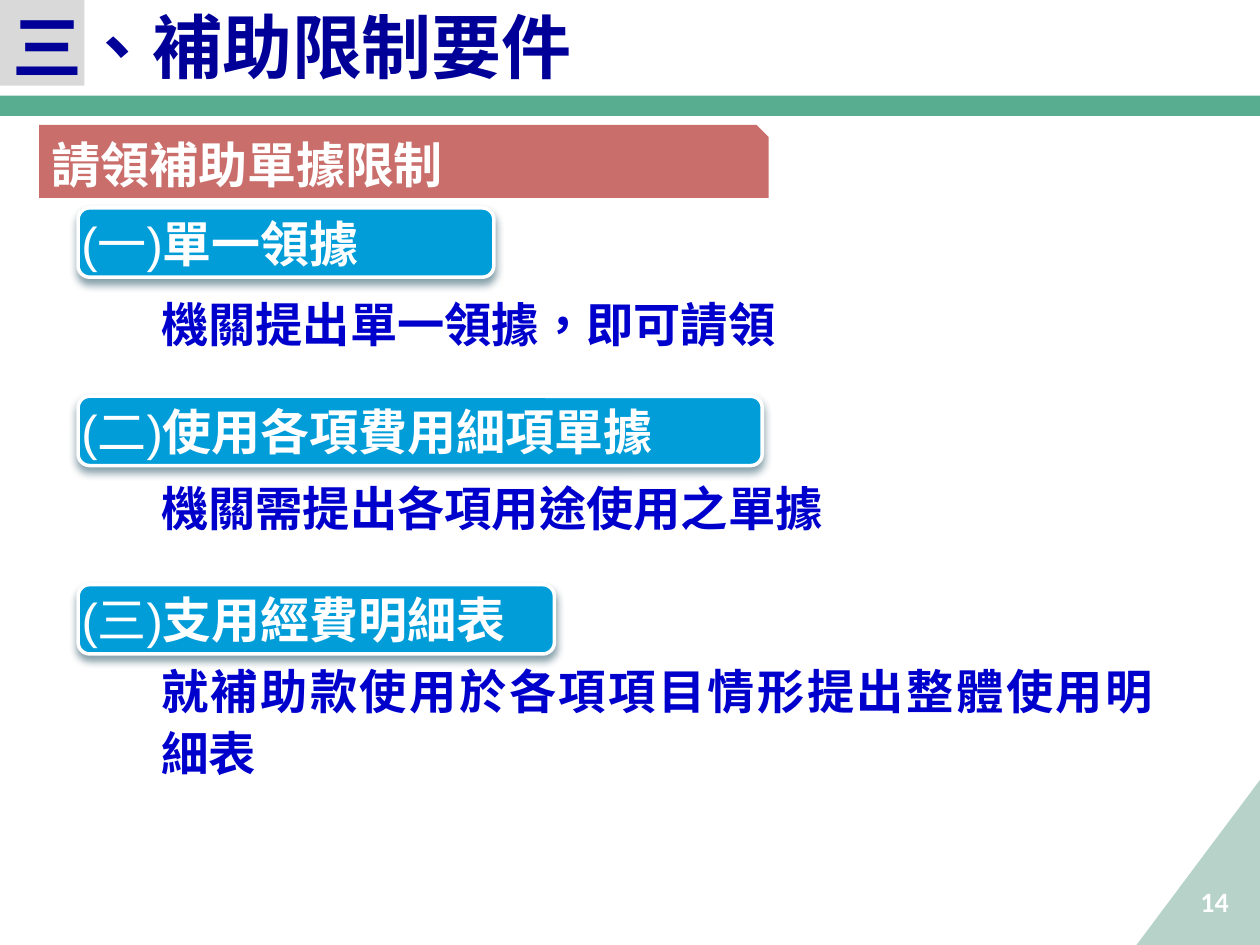
import pptx
import pptx.util
import pptx.dml.color
import pptx.enum.lang
import pptx.enum.shapes
import pptx.enum.text
import pptx.oxml
import pptx.oxml.ns

Inches = pptx.util.Inches
Pt = pptx.util.Pt
Shapes = pptx.enum.shapes.MSO_SHAPE
Align = pptx.enum.text.PP_ALIGN
Anchor = pptx.enum.text.MSO_ANCHOR
CJK = "Noto Sans CJK SC"
NAMESPACE = pptx.oxml.ns.nsdecls("a")

presentation = pptx.Presentation()
presentation.slide_width = Inches(10)
presentation.slide_height = Inches(7.5)
slide = presentation.slides.add_slide(presentation.slide_layouts[6])


def add_box(preset, left, top, width, height, fill=None):
    place = [Inches(value) for value in (left, top, width, height)]
    if preset is None:
        shape = slide.shapes.add_textbox(*place)
    else:
        shape = slide.shapes.add_shape(preset, *place)
        shape.shadow.inherit = False
        shape.fill.solid()
        shape.fill.fore_color.rgb = pptx.dml.color.RGBColor.from_string(fill)
        shape.line.fill.background()
    shape.text_frame.word_wrap = True
    shape.text_frame.vertical_anchor = Anchor.MIDDLE
    return shape


def write(paragraph, runs, size, name, color, align=Align.LEFT):
    paragraph.alignment = align
    font = paragraph.font
    font.size = Pt(size)
    font.name = name
    font.color.rgb = pptx.dml.color.RGBColor.from_string(color)
    font.language_id = pptx.enum.lang.MSO_LANGUAGE_ID.TRADITIONAL_CHINESE
    latin = paragraph._p.pPr.find(".//" + pptx.oxml.ns.qn("a:latin"))
    latin.addnext(pptx.oxml.parse_xml(f'<a:ea {NAMESPACE} typeface="{CJK}"/>'))
    for text, bold in runs:
        run = paragraph.add_run()
        run.text = text
        run.font.bold = bold


add_box(Shapes.RECTANGLE, 0, 0, 0.67, 0.68, "D9D9D9")
title = add_box(None, 0, -0.02, 9.77, 0.77)
write(title.text_frame.paragraphs[0], [("三、補助限制要件", True)], 40, CJK, "000099")

corner = add_box(Shapes.RIGHT_TRIANGLE, 9.02, 6.19, 0.98, 1.31, "B6D2C9")
corner._element.spPr.xfrm.set("flipH", "1")
add_box(Shapes.RECTANGLE, 0, 0.76, 10, 0.16, "58AC90")
number = add_box(None, 7.52, 6.95, 2.33, 0.4)
write(number.text_frame.paragraphs[0], [("14", True)], 16, "Calibri", "FFFFFF", Align.RIGHT)

sections = [
    ("(一)", "單一領據", 3.3, "機關提出單一領據，即可請領"),
    ("(二)", "使用各項費用細項單據", 5.43, "機關需提出各項用途使用之單據"),
    ("(三)", "支用經費明細表", 3.78, "就補助款使用於各項項目情形提出整體使用明細表"),
]
line_pitch = 35

body = add_box(None, 0, 1.77, 9.25, 4.48).text_frame
body.vertical_anchor = Anchor.TOP
body.margin_top = Inches(0.05) + Pt(line_pitch)
for index, (label, heading, width, detail) in enumerate(sections):
    paragraph = body.add_paragraph() if index else body.paragraphs[0]
    write(paragraph, [(detail, True)], 27, CJK, "0000CC", Align.JUSTIFY)
    paragraph.line_spacing = Pt(line_pitch)
    paragraph.space_before = Pt(2 * line_pitch if index else 0)
    paragraph._p.pPr.set("marL", str(Inches(1.18)))
    paragraph._p.pPr.set("indent", "0")

banner = add_box(Shapes.SNIP_1_RECTANGLE, 0.31, 0.99, 5.79, 0.58, "CA6E6C")
write(banner.text_frame.paragraphs[0], [("請領補助單據限制", True)], 28, "Arial", "FFFFFF")

for index, (label, heading, width, detail) in enumerate(sections):
    badge = add_box(Shapes.ROUNDED_RECTANGLE, 0.62, 1.65 + 1.495 * index, width, 0.55, "009DD9")
    badge.line.color.rgb = pptx.dml.color.RGBColor.from_string("FFFFFF")
    badge.line.width = Pt(2)
    effects = badge._element.spPr.find(pptx.oxml.ns.qn("a:effectLst"))
    effects.append(pptx.oxml.parse_xml(
        f'<a:outerShdw {NAMESPACE} blurRad="{Pt(4.5)}" dist="{Pt(3)}" dir="5400000" rotWithShape="0">'
        '<a:srgbClr val="00374C"><a:alpha val="48000"/></a:srgbClr></a:outerShdw>'))
    frame = badge.text_frame
    frame.margin_left = frame.margin_right = 0
    frame.margin_top = frame.margin_bottom = Inches(0.12)
    write(frame.paragraphs[0], [(label, False), (heading, True)], 28, "Arial", "FFFFFF")

presentation.save("out.pptx")
